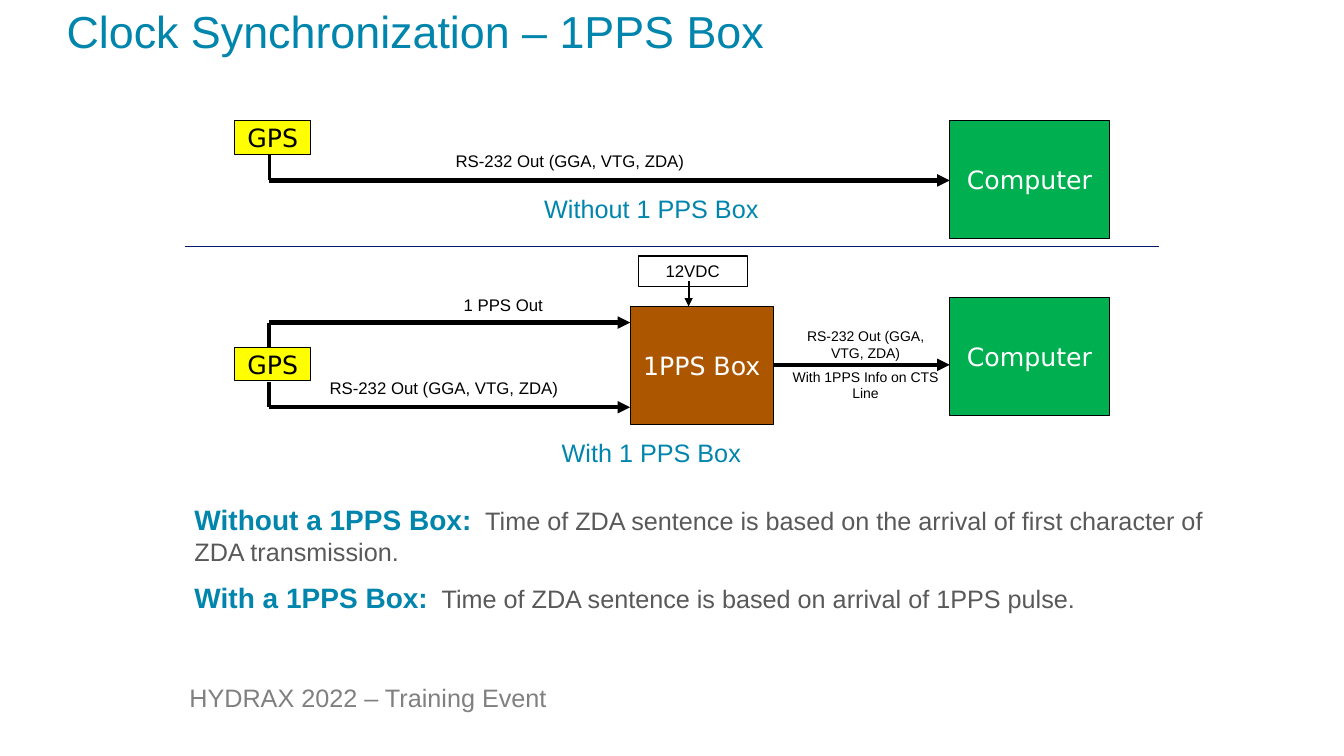
from lxml.etree import SubElement
from pptx import Presentation
from pptx.dml.color import RGBColor
from pptx.enum.shapes import MSO_CONNECTOR, MSO_SHAPE
from pptx.enum.text import MSO_ANCHOR, MSO_AUTO_SIZE, PP_ALIGN
from pptx.oxml.ns import qn
from pptx.util import Inches, Pt

BLACK, WHITE, TEAL, GRAY = "000000", "FFFFFF", "0085AD", "595959"
YELLOW, GREEN, BROWN, NAVY = "FFFF00", "00B050", "AC5600", "00196E"
BODY_FONT, BOX_FONT = "Arial", "DejaVu Sans"
GPS_X, BOX_X, BOX_RIGHT, COMPUTER_X = 2.67, 6.25, 7.67, 9.42
SERIAL_TEXT = "RS-232 Out (GGA, VTG, ZDA)"


def color(value):
    """Turn a hex string into a colour."""
    return RGBColor.from_string(value)


def set_attributes(target, values):
    """Set each named value on the target."""
    for name, value in values.items():
        setattr(target, name, value)


def add_run(paragraph, text, size, hex_color, font=BODY_FONT, bold=False):
    """Append a formatted run to a paragraph."""
    run = paragraph.add_run()
    run.text = text
    set_attributes(run.font, {"size": Pt(size), "name": font, "bold": bold})
    run.font.color.rgb = color(hex_color)


def add_paragraphs(frame, paragraphs, align=PP_ALIGN.LEFT, gap=0):
    """Fill a text frame with paragraphs, each a list of run arguments."""
    for index, runs in enumerate(paragraphs):
        paragraph = frame.add_paragraph() if index else frame.paragraphs[0]
        set_attributes(paragraph, {"alignment": align,
                                   "space_before": Pt(gap if index else 0)})
        for run in runs:
            add_run(paragraph, *run)


def add_text(slide, position, paragraphs, align=PP_ALIGN.LEFT, gap=0, wrap=True):
    """Add a text box at left, top, width, height."""
    frame = slide.shapes.add_textbox(*map(Inches, position)).text_frame
    set_attributes(frame, {"word_wrap": wrap,
                           "auto_size": MSO_AUTO_SIZE.SHAPE_TO_FIT_TEXT})
    add_paragraphs(frame, paragraphs, align, gap)


def add_box(slide, position, run, fill=None, anchor=MSO_ANCHOR.MIDDLE, wrap=False):
    """Add an outlined rectangle with a centred label."""
    shape = slide.shapes.add_shape(MSO_SHAPE.RECTANGLE, *map(Inches, position))
    shape.shadow.inherit = False
    if fill:
        shape.fill.solid()
        shape.fill.fore_color.rgb = color(fill)
    else:
        shape.fill.background()
    shape.line.color.rgb = color(BLACK)
    shape.line.width = Pt(0.75)
    set_attributes(shape.text_frame, {"word_wrap": wrap, "vertical_anchor": anchor})
    add_paragraphs(shape.text_frame, [[run]], PP_ALIGN.CENTER)


def add_line(slide, points, width=3, hex_color=BLACK, arrow=True):
    """Add a straight line from x, y to x, y, with an optional arrowhead."""
    line = slide.shapes.add_connector(MSO_CONNECTOR.STRAIGHT, *map(Inches, points))
    line.line.color.rgb = color(hex_color)
    line.line.width = Pt(width)
    if arrow:
        SubElement(line.line._get_or_add_ln(), qn("a:tailEnd"), type="triangle")
    SubElement(line._element.spPr, qn("a:effectLst"))


def add_title(slide, text):
    """Place and format the title placeholder."""
    title = slide.shapes.title
    for name, value in zip(("left", "top", "width", "height"), (0.5, 0.12, 12.33, 1.08)):
        setattr(title, name, Inches(value))
    frame = title.text_frame
    set_attributes(frame, {"vertical_anchor": MSO_ANCHOR.TOP, "word_wrap": True,
                           "auto_size": MSO_AUTO_SIZE.NONE})
    add_paragraphs(frame, [[(text, 32, TEAL)]])
    frame.paragraphs[0].line_spacing = Pt(29)
    frame.paragraphs[0]._p.get_or_add_pPr().set("marL", str(Inches(0.06)))


def add_wire(slide, start_y, end_y, end_x, stem_width=3):
    """Lead a wire out of a GPS box and across to an arrowhead."""
    add_line(slide, (GPS_X, start_y, GPS_X, end_y), stem_width, arrow=False)
    add_line(slide, (GPS_X, end_y, end_x, end_y))


def add_devices(slide, gps_top, computer_top):
    """Add the GPS and computer boxes of one setup."""
    add_box(slide, (2.33, gps_top, 0.75, 0.33), ("GPS", 18, BLACK, BOX_FONT), YELLOW)
    add_box(slide, (COMPUTER_X, computer_top, 1.58, 1.17),
            ("Computer", 18, WHITE, BOX_FONT), GREEN)


def add_diagram(slide):
    """Draw the setups without and with the 1PPS box."""
    add_devices(slide, 1.2, 1.2)
    add_wire(slide, 1.54, 1.79, COMPUTER_X, 2.25)
    add_devices(slide, 3.45, 2.95)
    add_wire(slide, 3.79, 4.04, BOX_X)
    add_wire(slide, 3.45, 3.2, BOX_X)
    add_box(slide, (BOX_X, 3.04, 1.42, 1.17), ("1PPS Box", 18, WHITE, BOX_FONT), BROWN)
    add_line(slide, (BOX_RIGHT, 3.62, COMPUTER_X, 3.62))
    add_line(slide, (6.83, 2.79, 6.83, 3.04), 1.5)
    add_box(slide, (6.33, 2.54, 1.08, 0.3), ("12VDC", 12, BLACK),
            anchor=MSO_ANCHOR.TOP, wrap=True)
    add_line(slide, (1.83, 2.45, 11.5, 2.45), 0.75, NAVY, arrow=False)


def add_labels(slide):
    """Label the wires and the two setups."""
    for left, top, width, text in ((4.42, 1.45, 2.67, SERIAL_TEXT),
                                   (3.17, 3.7, 2.67, SERIAL_TEXT),
                                   (4.5, 2.87, 1.25, "1 PPS Out")):
        add_text(slide, (left, top, width, 0.3), [[(text, 12, BLACK)]])
    add_text(slide, (7.75, 3.2, 1.67, 0.85),
             [[(text, 10, BLACK)] for text in (SERIAL_TEXT, "With 1PPS Info on CTS Line")],
             PP_ALIGN.CENTER, 5)
    for top, text in ((1.87, "Without 1 PPS Box"), (4.29, "With 1 PPS Box")):
        add_text(slide, (4.67, top, 3.58, 0.4), [[(text, 18, TEAL)]], PP_ALIGN.CENTER)


def add_explanation(slide):
    """Explain the timing of each setup."""
    entries = (
        ("Without a 1PPS Box:", "Time of ZDA sentence is based on the arrival of "
                                "first character of ZDA transmission."),
        ("With a 1PPS Box:", "Time of ZDA sentence is based on arrival of 1PPS pulse."),
    )
    add_text(slide, (1.83, 4.94, 10.52, 1.25),
             [[(term, 20, TEAL, BODY_FONT, True), ("  " + meaning, 18, GRAY)]
              for term, meaning in entries], gap=10)


def main():
    """Build and save the slide."""
    presentation = Presentation()
    presentation.slide_width = Inches(13.33)
    presentation.slide_height = Inches(7.5)
    slide = presentation.slides.add_slide(presentation.slide_layouts[5])
    add_text(slide, (1.78, 6.72, 3.75, 0.4),
             [[("HYDRAX 2022 – Training Event", 18, "808080")]], wrap=False)
    add_title(slide, "Clock Synchronization – 1PPS Box")
    add_diagram(slide)
    add_labels(slide)
    add_explanation(slide)
    presentation.save("out.pptx")


if __name__ == "__main__":
    main()
